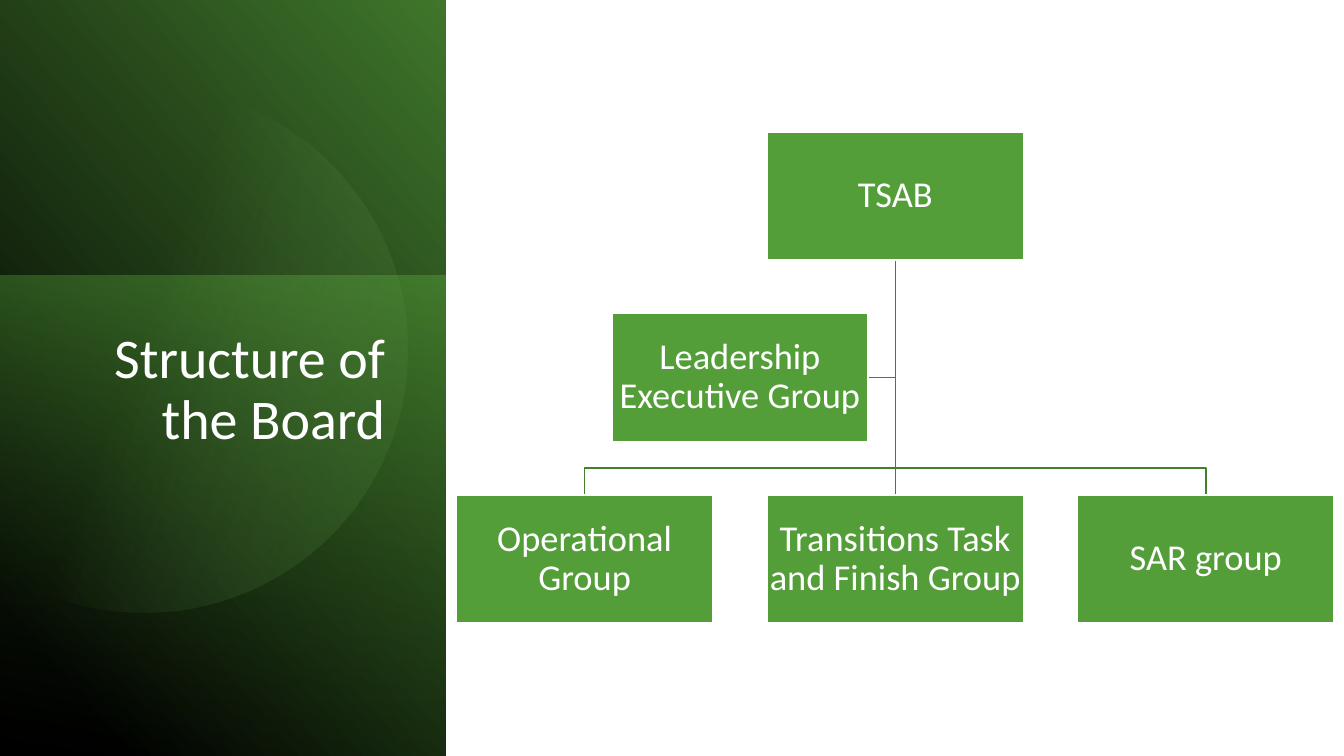
import math

from lxml import etree
from pptx import Presentation
from pptx.dml.color import RGBColor
from pptx.enum.shapes import MSO_CONNECTOR, MSO_SHAPE
from pptx.enum.text import MSO_ANCHOR, MSO_AUTO_SIZE, PP_ALIGN
from pptx.oxml.ns import qn
from pptx.util import Inches, Pt

RECT, STRAIGHT = MSO_SHAPE.RECTANGLE, MSO_CONNECTOR.STRAIGHT
TOP, MIDDLE = MSO_ANCHOR.TOP, MSO_ANCHOR.MIDDLE
CENTER, RIGHT = PP_ALIGN.CENTER, PP_ALIGN.RIGHT
NO_FIT = MSO_AUTO_SIZE.NONE

SLIDE_W, SLIDE_H = 13.33, 7.5
FONT = "Calibri"
COLORS = {
    "white": "FFFFFF", "black": "000000", "box": "549E39", "line": "437F2E",
    "leaf": "3F762B", "forest": "2A4F1C", "mint": "93D07D",
}


def rgb(name):
    return RGBColor.from_string(COLORS[name])


def gradient(sp, stops, angle):
    """Stops are (position %, colour, opacity %); angle is counter-clockwise."""
    sp.shadow.inherit = False
    sp.line.fill.background()
    sp.fill.gradient()
    sp.fill.gradient_angle = angle
    gs_list = sp._element.spPr.find(".//" + qn("a:gsLst"))
    for gs in list(gs_list):
        gs_list.remove(gs)
    for pos, color, opacity in stops:
        gs = etree.SubElement(gs_list, qn("a:gs"), pos=str(pos * 1000))
        clr = etree.SubElement(gs, qn("a:srgbClr"), val=COLORS[color])
        etree.SubElement(clr, qn("a:alpha"), val=str(opacity * 1000))


def write(tf, text, size, align, anchor):
    tf.word_wrap = True
    tf.auto_size = NO_FIT
    tf.vertical_anchor = anchor
    p = tf.paragraphs[0]
    p.alignment = align
    p.line_spacing = 0.9
    r = p.add_run()
    r.text = text
    r.font.name, r.font.size = FONT, Pt(size)
    r.font.color.rgb = rgb("white")


def polyline(s, points, close):
    points = [(Inches(x), Inches(y)) for x, y in points]
    builder = s.shapes.build_freeform(*points[0])
    builder.add_line_segments(points[1:], close=close)
    return builder.convert_to_shape()


def add_panel(s, w, h):
    # Dark backdrop and the glow over its lower part
    sp = s.shapes.add_shape(RECT, 0, 0, Inches(w), Inches(h))
    gradient(sp, [(11, "black", 100), (100, "leaf", 100)], 40)
    glow_top = 0.365 * h
    sp = s.shapes.add_shape(RECT, 0, Inches(glow_top), Inches(w), Inches(h - glow_top))
    gradient(sp, [(0, "box", 50), (100, "forest", 0)], 260)

    # Disc cut off at the slide's left edge
    cx, cy, radius, steps = 1.43, 3.47, 2.61, 120
    cut = math.acos(-cx / radius)
    angles = [cut * (2 * i / steps - 1) for i in range(steps + 1)]
    disc = [(cx + radius * math.cos(a), cy + radius * math.sin(a)) for a in angles]
    gradient(polyline(s, disc, True), [(39, "mint", 0), (100, "leaf", 26)], 340)


def add_title(s, text, x, y, w, h):
    title = s.shapes.title
    title.left, title.top, title.width, title.height = map(Inches, (x, y, w, h))
    write(title.text_frame, text, 40, RIGHT, TOP)
    # Bring the title in front of the panel
    s.shapes._spTree.append(title._element)


def style_line(sp):
    sp.line.color.rgb = rgb("line")
    sp.line.width = Pt(1)


def add_org_chart(s, left, top):
    box_w, box_h, col_step, row_step = 2.54, 1.27, 3.08, 1.8
    boxes = [  # text, column, row
        ("TSAB", 1, 0),
        ("Operational Group", 0, 2),
        ("Transitions Task and Finish Group", 1, 2),
        ("SAR group", 2, 2),
        ("Leadership Executive Group", 0.5, 1),
    ]

    # Lines from the board to each group
    trunk_x, trunk_y = left + col_step + box_w / 2, top + box_h
    groups_y = top + 2 * row_step
    bus_y = groups_y - (row_step - box_h) / 2
    side_x, side_y = left + col_step / 2 + box_w, top + row_step + box_h / 2
    routes = [[(trunk_x, side_y), (side_x, side_y)]]
    for x in (trunk_x + col_step, trunk_x - col_step):
        routes.append([(trunk_x, bus_y), (x, bus_y), (x, groups_y)])
    for route in routes:
        sp = polyline(s, [(trunk_x, trunk_y)] + route, False)
        sp.shadow.inherit = False
        sp.fill.background()
        style_line(sp)
    trunk = s.shapes.add_connector(
        STRAIGHT, *map(Inches, (trunk_x, trunk_y, trunk_x, groups_y)))
    style_line(trunk)
    etree.SubElement(trunk._element.spPr, qn("a:effectLst"))

    # Boxes
    for text, col, row in boxes:
        x, y = left + col * col_step, top + row * row_step
        sp = s.shapes.add_shape(RECT, *map(Inches, (x, y, box_w, box_h)))
        sp.shadow.inherit = False
        sp.fill.solid()
        sp.fill.fore_color.rgb = rgb("box")
        sp.line.color.rgb = rgb("white")
        sp.line.width = Pt(1)
        tf = sp.text_frame
        tf.margin_left = tf.margin_right = Inches(0.02)
        tf.margin_top = tf.margin_bottom = Inches(0.02)
        write(tf, text, 26, CENTER, MIDDLE)


def main():
    prs = Presentation()
    prs.slide_width, prs.slide_height = Inches(SLIDE_W), Inches(SLIDE_H)
    s = prs.slides.add_slide(prs.slide_layouts[5])
    add_panel(s, 4.42, SLIDE_H)
    add_title(s, "Structure of the Board", 0.58, 3.23, 3.34, 3.86)
    add_org_chart(s, 4.53, 1.31)
    prs.save("out.pptx")


if __name__ == "__main__":
    main()
